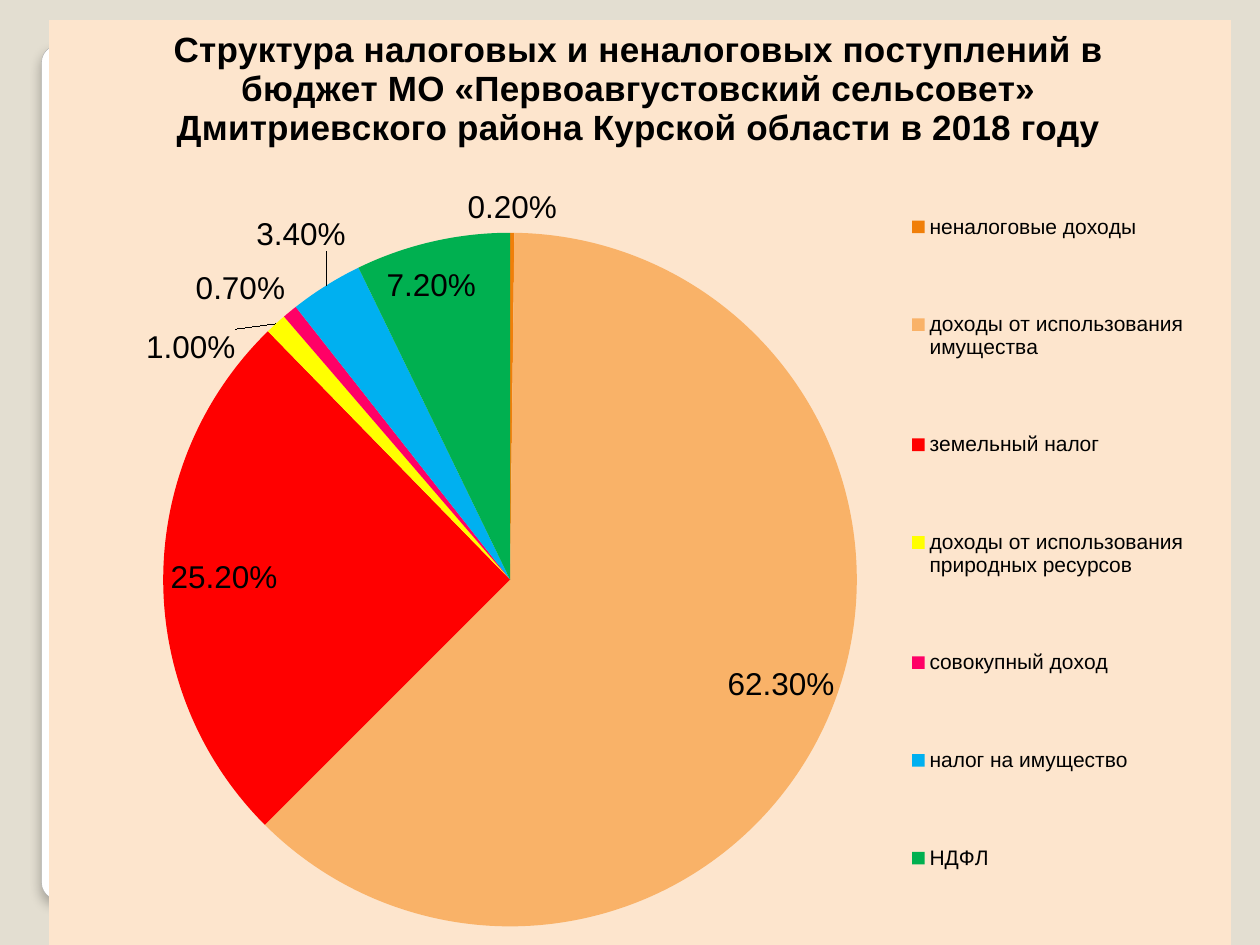
from lxml import etree
from pptx import Presentation
from pptx.chart.data import CategoryChartData
from pptx.dml.color import RGBColor
from pptx.enum.chart import XL_CHART_TYPE, XL_LABEL_POSITION as POS, XL_LEGEND_POSITION
from pptx.enum.shapes import MSO_SHAPE
from pptx.oxml import parse_xml
from pptx.oxml.ns import nsdecls, qn
from pptx.util import Inches, Pt

TITLE = ("Структура налоговых и неналоговых поступлений в бюджет МО "
         "«Первоавгустовский сельсовет» Дмитриевского района Курской области в 2018 году")
# Name, share, colour, label position, label shift
SLICES = [
    ("неналоговые доходы", 0.002, "F07F09", POS.OUTSIDE_END, None),
    ("доходы от использования имущества", 0.623, "F9B268", POS.INSIDE_END, (0.01, -0.01)),
    ("земельный налог", 0.252, "FF0000", POS.INSIDE_END, None),
    ("доходы от использования природных ресурсов", 0.01, "FFFF00", POS.OUTSIDE_END,
     (-0.03, 0.05)),
    ("совокупный доход", 0.007, "FF0066", POS.OUTSIDE_END, None),
    ("налог на имущество", 0.034, "00B0F0", POS.OUTSIDE_END, (0.02, -0.03)),
    ("НДФЛ", 0.072, "00B050", POS.INSIDE_END, (-0.04, 0.02)),
]


def paint(fill, color):
    fill.solid()
    fill.fore_color.rgb = RGBColor.from_string(color)


def manual_layout(x, y, w=None, h=None, target=None, mode="edge"):
    """Layout of a chart part, as fractions of the chart's size."""
    items = [("layoutTarget", target), ("xMode", mode), ("yMode", mode),
             ("x", x), ("y", y), ("w", w), ("h", h)]
    parts = "".join(f'<c:{tag} val="{val}"/>' for tag, val in items if val is not None)
    return parse_xml(f'<c:layout {nsdecls("c")}><c:manualLayout>{parts}'
                     '</c:manualLayout></c:layout>')


prs = Presentation()
prs.slide_width, prs.slide_height = Inches(10), Inches(7.5)
s = prs.slides.add_slide(prs.slide_layouts[6])
paint(s.background.fill, "E3DED1")

# White card behind the chart
card = s.shapes.add_shape(MSO_SHAPE.ROUNDED_RECTANGLE, Inches(0.33), Inches(0.36),
                          Inches(9.33), Inches(6.78))
card.adjustments[0] = 0.02
paint(card.fill, "FFFFFF")
paint(card.line.fill, "A4A4A4")
card.line.width = Pt(0.16)
card.shadow.inherit = False
effects = card._element.spPr.find(qn("a:effectLst"))
effects.append(parse_xml(
    f'<a:outerShdw {nsdecls("a")} blurRad="{Pt(6)}" dist="{Pt(4)}" dir="5400000">'
    '<a:srgbClr val="000000"><a:alpha val="25000"/></a:srgbClr></a:outerShdw>'))

# Pie chart
data = CategoryChartData(number_format="0.00%")
data.categories = [name for name, *_ in SLICES]
data.add_series("Series 1", [value for _, value, *_ in SLICES])
chart = s.shapes.add_chart(XL_CHART_TYPE.PIE, Inches(0.39), Inches(0.16),
                           Inches(9.38), Inches(7.34), data).chart
chart.font.size = Pt(18)
chart.font.name = "Arial"
chart.font.color.rgb = RGBColor.from_string("000000")

chart.has_title = True
title = chart.chart_title
tf = title.text_frame
tf.text = TITLE
font = tf.paragraphs[0].runs[0].font
font.size, font.bold, font.name = Pt(20), True, "Arial"
font.color.rgb = RGBColor.from_string("000000")
title.include_in_layout = False
for old in title._element.findall(qn("c:layout")):
    title._element.remove(old)
title._element.find(qn("c:tx")).addnext(manual_layout(0.1, 0))

chart.has_legend = True
legend = chart.legend
legend.position = XL_LEGEND_POSITION.RIGHT
legend.include_in_layout = False
legend.font.size = Pt(12)
legend.font.name = "Arial"
for old in legend._element.findall(qn("c:layout")):
    legend._element.remove(old)
legend._element.find(qn("c:legendPos")).addnext(manual_layout(0.71, 0.13, 0.27, 0.87))

plot = chart.plots[0]
plot.vary_by_categories = True
plot_area = chart._chartSpace.chart.plotArea
for old in plot_area.findall(qn("c:layout")):
    plot_area.remove(old)
plot_area.insert(0, manual_layout(0.09, 0.23, 0.6, 0.75, target="inner"))

plot.has_data_labels = True
labels = plot.data_labels
labels.show_value = True
labels.show_percentage = False
labels.number_format, labels.number_format_is_linked = "0.00%", False
labels.font.size = Pt(18)
labels.position = POS.BEST_FIT

points = plot.series[0].points
for i, (_, _, color, position, _) in enumerate(SLICES):
    paint(points[i].format.fill, color)
    label = points[i].data_label
    label.position = position
    label.font.size = Pt(18)
for dlbl, (*_, shift) in zip(plot.series[0]._element.iter(qn("c:dLbl")), SLICES):
    dlbl.find(qn("c:showVal")).set("val", "1")
    dlbl.find(qn("c:showPercent")).set("val", "0")
    idx = dlbl.find(qn("c:idx"))
    idx.addnext(etree.Element(qn("c:numFmt"), formatCode="0.00%", sourceLinked="0"))
    if shift:
        idx.addnext(manual_layout(*shift, mode="factor"))

# Chart background
chart._chartSpace.chart.addnext(parse_xml(
    f'<c:spPr {nsdecls("c", "a")}><a:solidFill><a:srgbClr val="FDE5CD"/></a:solidFill>'
    '<a:ln><a:noFill/></a:ln></c:spPr>'))

prs.save("out.pptx")
